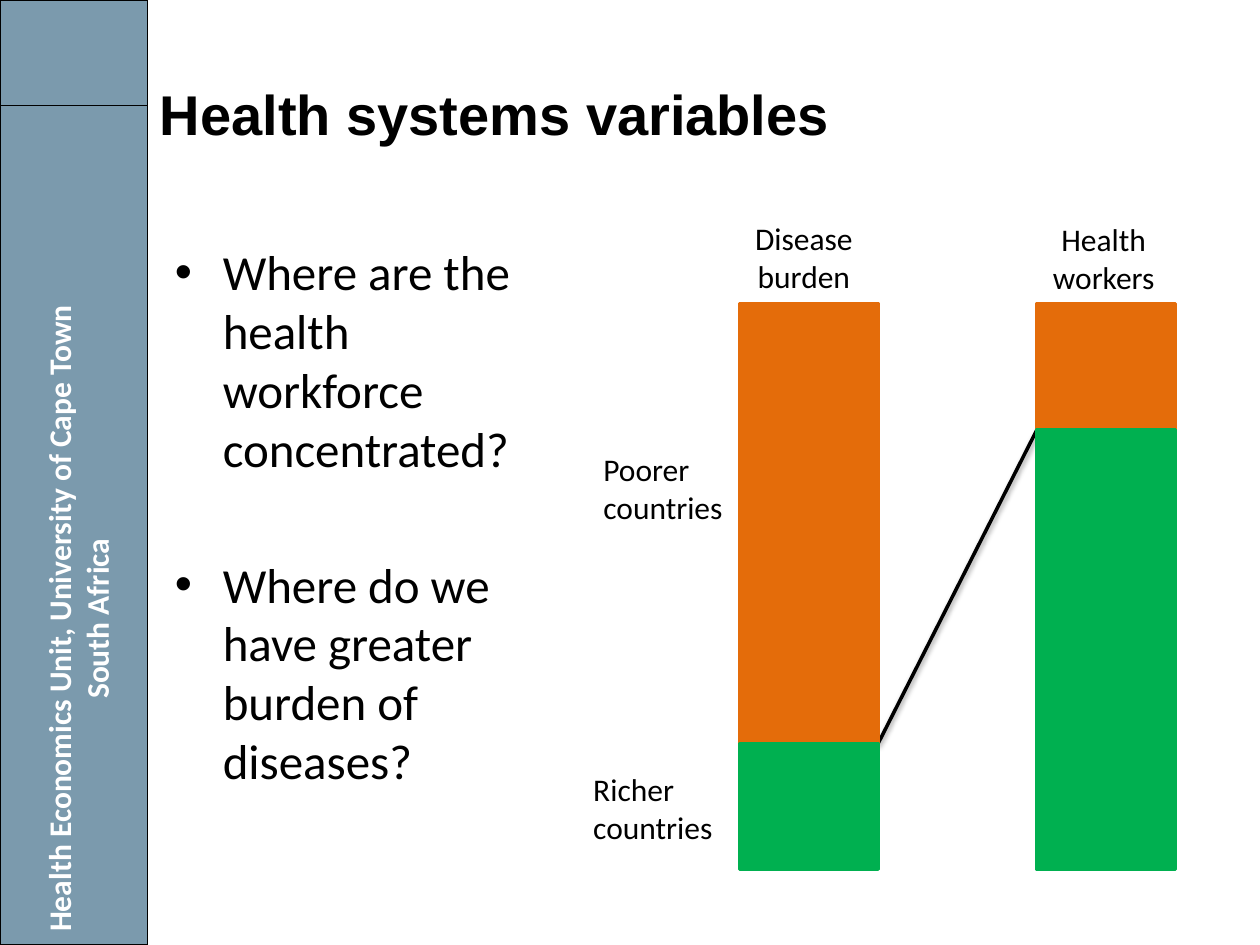
from dataclasses import dataclass

from lxml import etree
from pptx import Presentation
from pptx.dml.color import RGBColor
from pptx.enum.shapes import MSO_CONNECTOR, MSO_SHAPE
from pptx.enum.text import MSO_ANCHOR, PP_ALIGN
from pptx.oxml import parse_xml
from pptx.oxml.ns import nsdecls, qn
from pptx.util import Inches, Pt

RECTANGLE = MSO_SHAPE.RECTANGLE
STRAIGHT = MSO_CONNECTOR.STRAIGHT
LEFT, CENTER = PP_ALIGN.LEFT, PP_ALIGN.CENTER
TOP, MIDDLE = MSO_ANCHOR.TOP, MSO_ANCHOR.MIDDLE

COLORS = {
    "sidebar": "7B9AAD",
    "poorer": "E46C0A",
    "richer": "00B050",
    "black": "000000",
    "white": "FFFFFF",
}
SIDEBAR_WIDTH = 1.17
SIDEBAR_SPLIT = 0.84
BAR_WIDTH = 1.1
BAR_TOP, BAR_BOTTOM = 2.41, 6.9


@dataclass
class Bar:
    left: float
    split: float


@dataclass
class Label:
    text: str
    left: float
    top: float
    width: float
    align: PP_ALIGN


@dataclass
class Style:
    size: float
    font: str = "Calibri"
    color: str = "black"
    bold: bool = False


DISEASE_BURDEN = Bar(5.87, 5.9)
HEALTH_WORKERS = Bar(8.23, 3.41)
LABELS = [
    Label("Health workers", 8.23, 1.7, 1.06, CENTER),
    Label("Disease burden", 5.79, 1.69, 1.18, CENTER),
    Label("Poorer countries", 4.69, 3.52, 1.18, LEFT),
    Label("Richer countries", 4.61, 6.06, 1.18, LEFT),
]
QUESTIONS = [
    "Where are the health workforce concentrated?",
    "Where do we have greater burden of diseases?",
]
SIDEBAR_LINES = ["Health Economics Unit, University of Cape Town", "South Africa"]


def rgb(name: str) -> RGBColor:
    return RGBColor.from_string(COLORS[name])


def add_rectangle(page, left: float, top: float, width: float, height: float,
                  fill: str, line: str, line_width: float) -> None:
    shape = page.shapes.add_shape(
        RECTANGLE, Inches(left), Inches(top), Inches(width), Inches(height))
    shape.shadow.inherit = False
    shape.fill.solid()
    shape.fill.fore_color.rgb = rgb(fill)
    shape.line.color.rgb = rgb(line)
    shape.line.width = Pt(line_width)


def add_text(page, left: float, top: float, width: float, height: float,
             lines: list[str], style: Style, align: PP_ALIGN = LEFT,
             anchor: MSO_ANCHOR = TOP):
    """Add a wrapping text box with one paragraph per line and return its frame."""
    box = page.shapes.add_textbox(
        Inches(left), Inches(top), Inches(width), Inches(height))
    frame = box.text_frame
    frame.word_wrap = True
    frame.vertical_anchor = anchor
    for index, line in enumerate(lines):
        para = frame.add_paragraph() if index else frame.paragraphs[0]
        para.alignment = align
        span = para.add_run()
        span.text = line
        span.font.size = Pt(style.size)
        span.font.name = style.font
        span.font.bold = style.bold
        span.font.color.rgb = rgb(style.color)
    return frame


def add_sidebar(page) -> None:
    add_rectangle(page, 0, 0, SIDEBAR_WIDTH, SIDEBAR_SPLIT, "sidebar", "black", 0.75)
    add_rectangle(page, 0, SIDEBAR_SPLIT, SIDEBAR_WIDTH, 7.5 - SIDEBAR_SPLIT,
                  "sidebar", "black", 0.75)
    frame = add_text(page, 0.03, 2.32, SIDEBAR_WIDTH, 5.18, SIDEBAR_LINES,
                     Style(18, color="white", bold=True), CENTER, MIDDLE)
    frame.margin_left = frame.margin_right = 0
    frame.margin_top = frame.margin_bottom = 0
    frame._txBody.bodyPr.set("vert", "vert270")


def add_questions(page) -> None:
    frame = add_text(page, 1.29, 1.87, 3, 4.95, QUESTIONS, Style(28))
    for para in frame.paragraphs:
        properties = para._p.get_or_add_pPr()
        properties.set("marL", str(Inches(0.38)))
        properties.set("indent", str(-Inches(0.38)))
        bullet_font = etree.SubElement(properties, qn("a:buFont"))
        bullet_font.set("typeface", "Arial")
        etree.SubElement(properties, qn("a:buChar")).set("char", "•")
    frame.paragraphs[1].space_before = Pt(44)


def add_bar(page, bar: Bar) -> None:
    for color, top, bottom in (("poorer", BAR_TOP, bar.split),
                               ("richer", bar.split, BAR_BOTTOM)):
        add_rectangle(page, bar.left, top, BAR_WIDTH, bottom - top, color, color, 2)


def add_split_line(page, start: Bar, end: Bar) -> None:
    """Link the split points of two bars with a softly shadowed line."""
    line = page.shapes.add_connector(
        STRAIGHT, Inches(start.left + BAR_WIDTH), Inches(start.split),
        Inches(end.left), Inches(end.split))
    line.line.color.rgb = rgb("black")
    line.line.width = Pt(2)
    line._element.spPr.append(parse_xml(
        f'<a:effectLst {nsdecls("a")}>'
        f'<a:outerShdw blurRad="{Pt(3.1)}" dist="{Pt(1.6)}" dir="5400000" rotWithShape="0">'
        f'<a:srgbClr val="{COLORS["black"]}"><a:alpha val="38000"/></a:srgbClr>'
        '</a:outerShdw></a:effectLst>'))


def main() -> None:
    deck = Presentation()
    deck.slide_width, deck.slide_height = Inches(10), Inches(7.5)
    page = deck.slides.add_slide(deck.slide_layouts[6])
    add_sidebar(page)
    add_text(page, SIDEBAR_WIDTH, 0.25, 8.33, 1.3, ["Health systems variables"],
             Style(32, font="Arial", bold=True), anchor=MIDDLE)
    add_questions(page)
    add_split_line(page, DISEASE_BURDEN, HEALTH_WORKERS)
    for bar in (DISEASE_BURDEN, HEALTH_WORKERS):
        add_bar(page, bar)
    for label in LABELS:
        add_text(page, label.left, label.top, label.width, 0.71, [label.text],
                 Style(18), label.align)
    deck.save("out.pptx")


if __name__ == "__main__":
    main()
